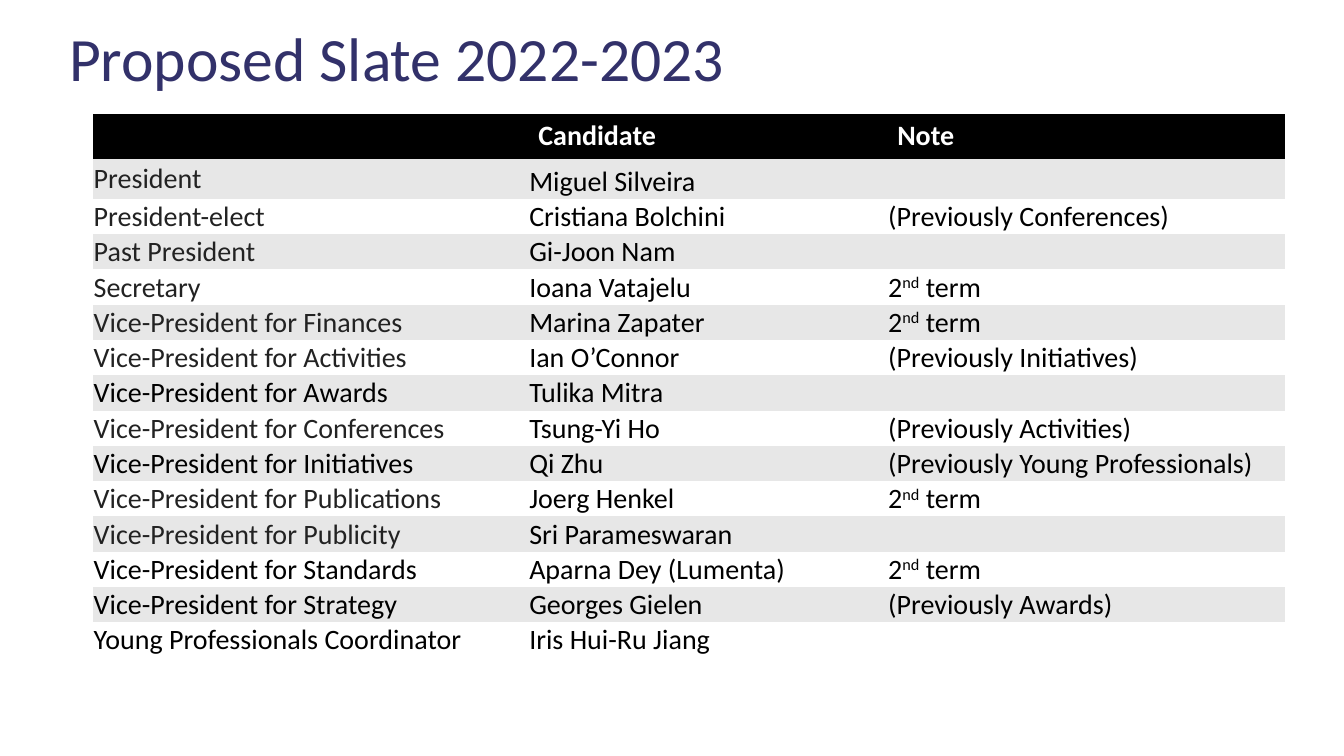
from pptx import Presentation, util as u
from pptx.dml.color import RGBColor
from pptx.enum import text

WIDTH, HEIGHT = u.Inches(13.33), u.Inches(7.5)
FONT = "Calibri"
NAVY = RGBColor(0x32, 0x31, 0x6A)
BLACK = RGBColor(0, 0, 0)
CHARCOAL = RGBColor(0x22, 0x22, 0x22)
GREY = RGBColor(0xE7, 0xE7, 0xE7)
WHITE = RGBColor(0xFF, 0xFF, 0xFF)

PLAIN_STYLE = "{2D5ABB26-0587-4C30-8999-92F81FD0307C}"
COLUMNS = [4.32, 3.56, 3.95]
HEADER_ROW, FIRST_ROW, BODY_ROW = 0.44, 0.4, 0.35
TIGHT = {"margin_left": u.Inches(0.01), "margin_right": u.Inches(0.01),
         "margin_top": u.Inches(0.01), "margin_bottom": 0}

HEADINGS = ["", "Candidate", "Note"]
SECOND_TERM = ("2", "nd", " term")
SLATE = [
    ("President", CHARCOAL, "Miguel Silveira", ""),
    ("President-elect", CHARCOAL, "Cristiana Bolchini", "(Previously Conferences)"),
    ("Past President", CHARCOAL, "Gi-Joon Nam", ""),
    ("Secretary", CHARCOAL, "Ioana Vatajelu", SECOND_TERM),
    ("Vice-President for Finances", CHARCOAL, "Marina Zapater", SECOND_TERM),
    ("Vice-President for Activities", CHARCOAL, "Ian O’Connor", "(Previously Initiatives)"),
    ("Vice-President for Awards", BLACK, "Tulika Mitra", ""),
    ("Vice-President for Conferences", CHARCOAL, "Tsung-Yi Ho", "(Previously Activities)"),
    ("Vice-President for Initiatives", BLACK, "Qi Zhu", "(Previously Young Professionals)"),
    ("Vice-President for Publications", CHARCOAL, "Joerg Henkel", SECOND_TERM),
    ("Vice-President for Publicity", CHARCOAL, "Sri Parameswaran", ""),
    ("Vice-President for Standards", BLACK, "Aparna Dey (Lumenta)", SECOND_TERM),
    ("Vice-President for Strategy", BLACK, "Georges Gielen", "(Previously Awards)"),
    ("Young Professionals Coordinator", BLACK, "Iris Hui-Ru Jiang", ""),
]


def apply_format(target, values):
    for name, value in values.items():
        setattr(target, name, value)


def add_run(paragraph, words, color, size=20, bold=False, raised=False):
    run = paragraph.add_run()
    run.text = words
    apply_format(run.font, {"name": FONT, "size": u.Pt(size), "bold": bold})
    run.font.color.rgb = color
    if raised:
        run.font._element.set("baseline", "30000")


def add_title(slide, words):
    box = slide.shapes.add_textbox(round(WIDTH * 0.044), round(HEIGHT * 0.011),
                                   round(WIDTH * 0.867), round(HEIGHT * 0.14))
    apply_format(box.text_frame, {"word_wrap": True,
                                  "vertical_anchor": text.MSO_ANCHOR.MIDDLE})
    paragraph = box.text_frame.paragraphs[0]
    paragraph.line_spacing = 0.9
    add_run(paragraph, words, NAVY, size=44)


def fill_cell(cell, content, fill, color, bold=False, **layout):
    """Write a string, or a (base, superscript, rest) tuple, into a filled cell."""
    cell.fill.solid()
    cell.fill.fore_color.rgb = fill
    apply_format(cell, layout)
    parts = content if isinstance(content, tuple) else (content,)
    for index, part in enumerate(parts):
        if part:
            add_run(cell.text_frame.paragraphs[0], part, color, bold=bold,
                    raised=index == 1)


def add_slate_table(slide):
    heights = [HEADER_ROW, FIRST_ROW] + [BODY_ROW] * (len(SLATE) - 1)
    frame = slide.shapes.add_table(
        len(heights), len(COLUMNS), round(WIDTH * 0.069), round(HEIGHT * 0.151),
        u.Inches(sum(COLUMNS)), u.Inches(sum(heights)))
    table = frame.table
    table._tbl.tblPr.find("{*}tableStyleId").text = PLAIN_STYLE
    for column, width in zip(table.columns, COLUMNS):
        column.width = u.Inches(width)
    for row, height in zip(table.rows, heights):
        row.height = u.Inches(height)

    for column, heading in enumerate(HEADINGS):
        fill_cell(table.cell(0, column), heading, BLACK, WHITE, bold=True)
    anchors = [text.MSO_ANCHOR.MIDDLE, text.MSO_ANCHOR.BOTTOM, text.MSO_ANCHOR.BOTTOM]
    for row, (role, role_color, candidate, note) in enumerate(SLATE, start=1):
        fill = GREY if row % 2 else WHITE
        contents = zip((role, candidate, note), (role_color, BLACK, BLACK), anchors)
        for column, (content, color, anchor) in enumerate(contents):
            fill_cell(table.cell(row, column), content, fill, color,
                      vertical_anchor=anchor, **TIGHT)


def main():
    presentation = Presentation()
    apply_format(presentation, {"slide_width": WIDTH, "slide_height": HEIGHT})
    slide = presentation.slides.add_slide(presentation.slide_layouts[6])
    add_title(slide, "Proposed Slate 2022-2023")
    add_slate_table(slide)
    presentation.save("out.pptx")


if __name__ == "__main__":
    main()
